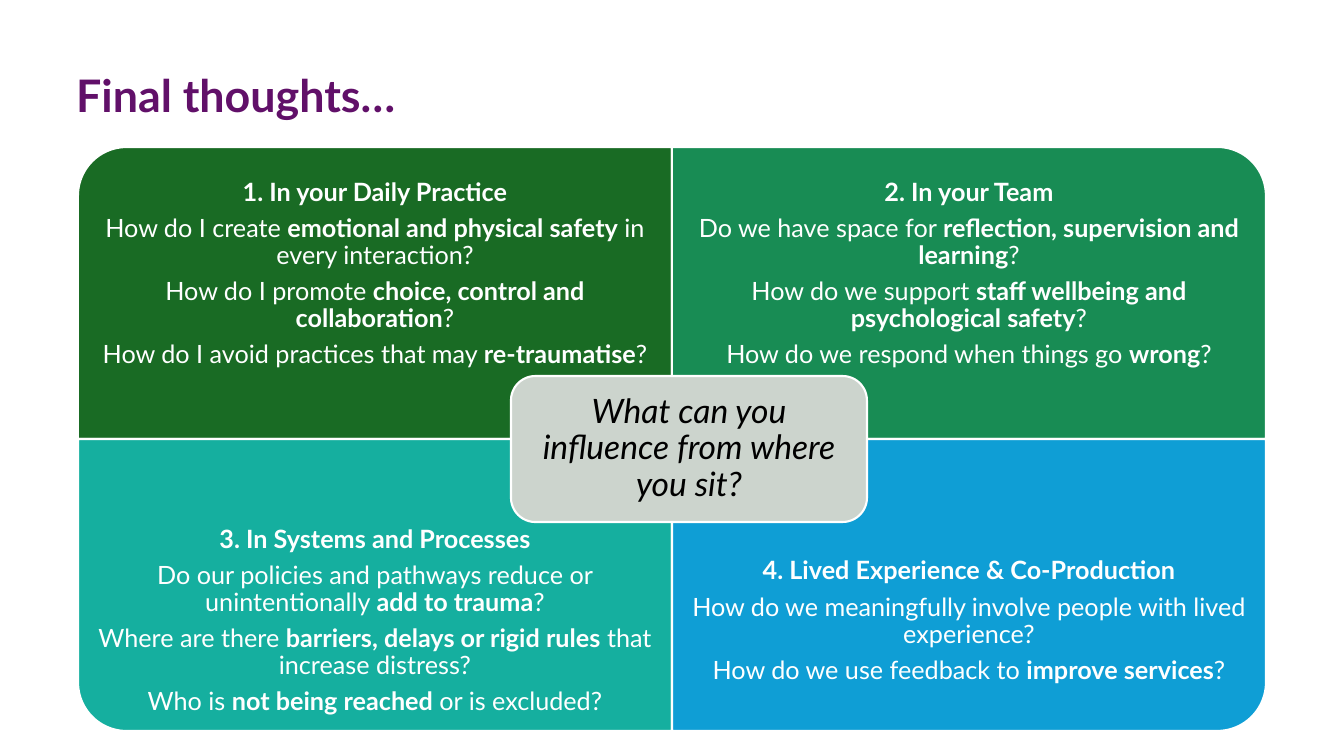
from dataclasses import dataclass

from pptx import Presentation
from pptx import util as u
from pptx.dml.color import RGBColor
from pptx.enum import shapes, text

PX = 914400 / 100.8


@dataclass(frozen=True)
class Theme:
    font: str = "Lato"
    title: str = "611069"
    light: str = "FFFFFF"
    dark: str = "000000"
    centre: str = "CCD4CD"
    quadrants: tuple = ("196B24", "188C54", "15AF9F", "0F9ED5")
    title_size: int = 32
    centre_size: int = 24
    body_size: int = 18


THEME = Theme()

# Reading order; asterisks enclose bold words
QUESTIONS = [
    ["*1. In your Daily Practice*",
     "How do I create *emotional and physical safety* in every interaction?",
     "How do I promote *choice, control and collaboration*?",
     "How do I avoid practices that may *re-traumatise*?"],
    ["*2. In your Team*",
     "Do we have space for *reflection, supervision and learning*?",
     "How do we support *staff wellbeing and psychological safety*?",
     "How do we respond when things go *wrong*?"],
    ["*3. In Systems and Processes*",
     "Do our policies and pathways reduce or unintentionally *add to trauma*?",
     "Where are there *barriers, delays or rigid rules* that increase distress?",
     "Who is *not being reached* or is excluded?"],
    ["*4. Lived Experience & Co-Production*",
     "How do we meaningfully involve people with lived experience?",
     "How do we use feedback to *improve services*?"],
]
ROTATIONS = (270, 0, 180, 90)  # turns the round corner outwards


def px(*lengths):
    return [u.Emu(round(length * PX)) for length in lengths]


def write_text(shape, lines, size, color, align=text.PP_ALIGN.CENTER,
               italic=False, inset=None, space_after=0):
    frame = shape.text_frame
    frame.word_wrap = True
    frame.auto_size = text.MSO_AUTO_SIZE.NONE
    frame.vertical_anchor = text.MSO_ANCHOR.MIDDLE
    if inset is not None:
        (margin,) = px(inset)
        frame.margin_left = frame.margin_right = margin
        frame.margin_top = frame.margin_bottom = margin
    for index, line in enumerate(lines):
        paragraph = frame.add_paragraph() if index else frame.paragraphs[0]
        paragraph.alignment = align
        paragraph.line_spacing = 0.9
        paragraph.space_before = u.Pt(0)
        paragraph.space_after = u.Pt(space_after)
        for part, words in enumerate(line.split("*")):
            if not words:
                continue
            run = paragraph.add_run()
            run.text = words
            run.font.name = THEME.font
            run.font.size = u.Pt(size)
            run.font.bold = part % 2 == 1
            run.font.italic = italic
            run.font.color.rgb = RGBColor.from_string(color)


def add_panel(slide, kind, box, fill):
    shape = slide.shapes.add_shape(kind, *px(*box))
    shape.shadow.inherit = False
    shape.fill.solid()
    shape.fill.fore_color.rgb = RGBColor.from_string(fill)
    shape.line.color.rgb = RGBColor.from_string(THEME.light)
    shape.line.width = u.Pt(1.5)
    return shape


def add_title(slide, box):
    title = slide.shapes.title
    title.left, title.top, title.width, title.height = px(*box)
    write_text(title, ["*Final thoughts…*"], THEME.title_size, THEME.title,
               align=text.PP_ALIGN.LEFT)


def add_quadrant(slide, box, lines, fill, rotation, text_offset):
    left, top, width, height = box
    panel_box = box
    if rotation % 180:  # swap the sides about the same centre
        shift = (width - height) / 2
        panel_box = (left + shift, top - shift, height, width)
    panel = add_panel(slide, shapes.MSO_SHAPE.ROUND_1_RECTANGLE, panel_box, fill)
    panel.rotation = rotation
    label = slide.shapes.add_textbox(
        *px(left, top + text_offset, width, height * 3 // 4))
    write_text(label, lines, THEME.body_size, THEME.light,
               inset=14, space_after=6.3)


def add_matrix(slide, box):
    left, top, width, height = box
    cell_width, cell_height = width // 2, height // 2
    for index, lines in enumerate(QUESTIONS):
        row, column = divmod(index, 2)
        cell = (left + column * cell_width, top + row * cell_height,
                cell_width, cell_height)
        add_quadrant(slide, cell, lines, THEME.quadrants[index],
                     ROTATIONS[index], text_offset=73 if row else 18)

    # Central question
    centre = add_panel(slide, shapes.MSO_SHAPE.ROUNDED_RECTANGLE,
                       (left + 433, top + 229, 356, 146), THEME.centre)
    write_text(centre, ["What can you influence from where you sit?"],
               THEME.centre_size, THEME.dark, italic=True, inset=17)


def main():
    presentation = Presentation()
    presentation.slide_width, presentation.slide_height = px(1344, 756)
    slide = presentation.slides.add_slide(presentation.slide_layouts[5])
    add_title(slide, (66, 25, 1159, 146))
    add_matrix(slide, (78, 147, 1188, 584))
    presentation.save("out.pptx")


if __name__ == "__main__":
    main()
